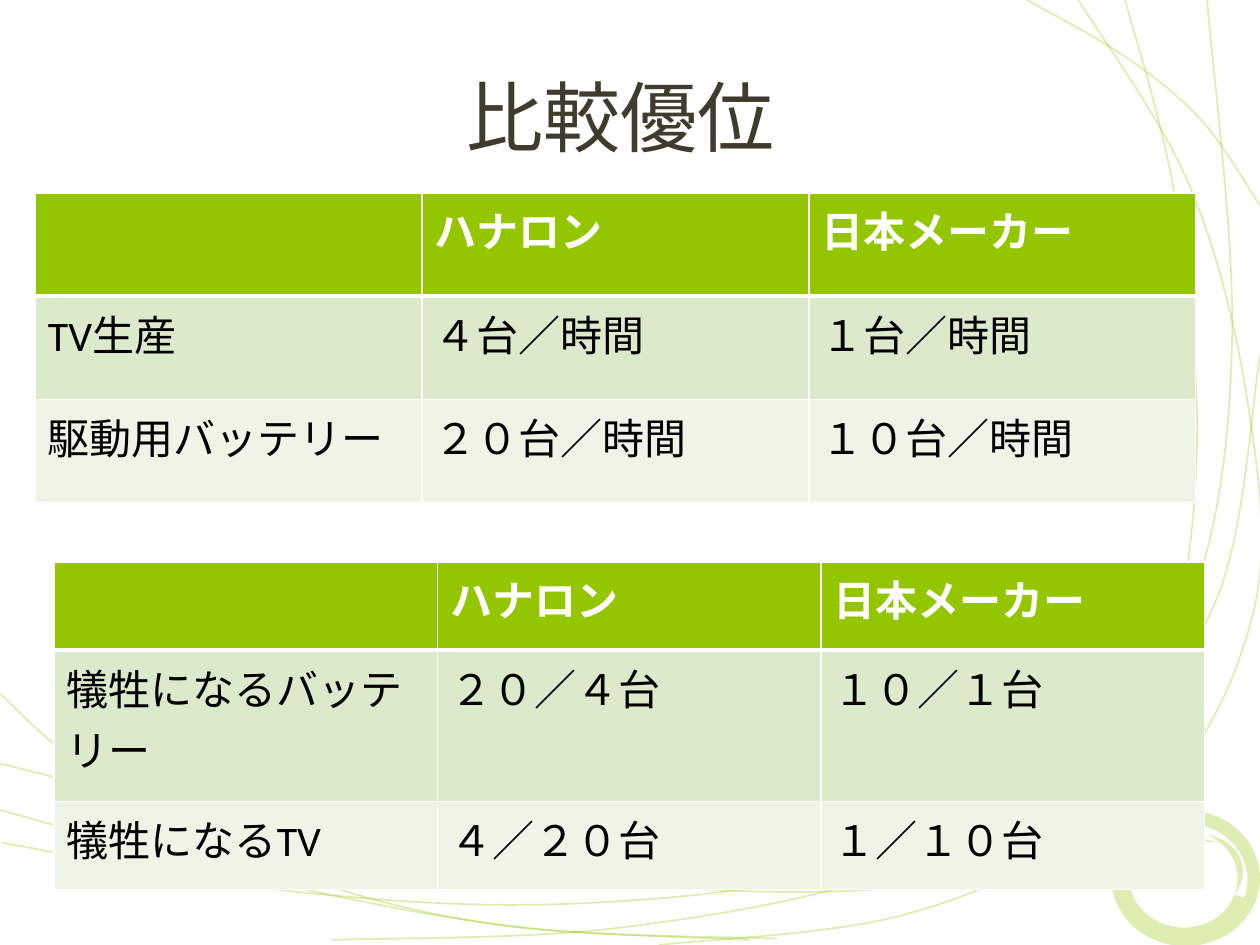
from dataclasses import dataclass
from math import cos, pi, radians, sin

from lxml import etree
from pptx import Presentation
from pptx import util as u
from pptx.dml.color import RGBColor
from pptx.enum import lang, text
from pptx.oxml.ns import qn


@dataclass(frozen=True)
class Theme:
    font: str = "Calibri"
    green: str = "94C600"
    band: str = "DCEACC"
    pale: str = "EEF5E7"
    white: str = "FFFFFF"
    black: str = "000000"
    dark: str = "3E3D2D"
    title: int = 44
    body: int = 24
    clear: int = 30  # opacity of the background art, in percent


THEME = Theme()

# Each background curve is a smooth line through a few knots, in inches
CURVES = {
    "left edge": [(-0.03, 5.48), (0.8, 6.18), (2.31, 6.93), (4.02, 7.35),
                  (6.17, 7.45)],
    "inner loop": [(5.23, 7.5), (7.14, 7.27), (8.44, 6.63), (9.24, 5.27),
                   (9.5, 3.52), (9.32, 1.54), (8.93, 0)],
    "outer loop": [(0, 6.06), (2.48, 6.65), (5.14, 7.03), (7.42, 7),
                   (9.13, 6.34), (9.95, 4.85), (9.9, 3.18), (9.44, 1.47),
                   (8.56, 0)],
    "low bowl": [(0.02, 6.69), (2.37, 7.08), (4.6, 7.17), (6.82, 6.87),
                 (8.61, 6.02), (9.65, 4.77), (10, 2.82)],
    "right bowl": [(2.63, 7.46), (4.86, 7.37), (7.02, 6.94), (8.63, 6.1),
                   (9.5, 4.64), (9.78, 2.63), (9.58, 0)],
    "top corner": [(8.15, 0), (8.93, 0.45), (9.54, 0.96), (10, 1.63)],
    "bottom corner": [(0, 6.43), (2.11, 6.99), (4.05, 7.35), (5.95, 7.46)],
}

# The brushed ring is an ellipse; its edges are shares of these radii
RING_X, RING_Y = 9.41, 6.97
RING_WIDE, RING_HIGH = 0.59, 0.54
HOLE = 0.7    # inner edge where the brush is widest
TAIL = 0.84   # inner edge where the brush runs out
SEAM = 20     # angle where the brush starts, in degrees

# Fine hairs of the brush: start and end
HAIRS = [((9.22, 6.61), (9.69, 6.69)), ((9.3, 6.76), (9.55, 6.84))]


def smooth(knots, steps=12):
    """Return points of a Catmull-Rom curve through the knots."""
    ends = [knots[0], *knots, knots[-1]]
    points = [knots[0]]
    for four in zip(ends, ends[1:], ends[2:], ends[3:]):
        for step in range(1, steps + 1):
            t = step / steps
            points.append(tuple(
                (2 * b + (c - a) * t + (2 * a - 5 * b + 4 * c - d) * t**2
                 + (3 * b - a - 3 * c + d) * t**3) / 2
                for a, b, c, d in zip(*four)))
    return points


def sweep(first, last, outer, inner, steps=60):
    """Outline a ring part; outer and inner give its edges for t in 0..1."""
    def edge(rule):
        for step in range(steps + 1):
            t = step / steps
            turn = radians(first + (last - first) * t)
            yield (RING_X + RING_WIDE * rule(t) * cos(turn),
                   RING_Y + RING_HIGH * rule(t) * sin(turn))
    return [*edge(outer), *reversed(list(edge(inner)))]


def hair(start, end, width=0.03):
    """Outline a thin diamond from start to end."""
    x, y = ((a + b) / 2 for a, b in zip(start, end))
    return [start, (x, y - width / 2), end, (x, y + width / 2)]


def paint(fill, code):
    fill.solid()
    fill.fore_color.rgb = RGBColor.from_string(code)


def draw(slide, points, close):
    """Draw a closed shape with a fill, or an open curve with a line."""
    spots = [(u.Inches(x), u.Inches(y)) for x, y in points]
    path = slide.shapes.build_freeform(*spots[0])
    path.add_line_segments(spots[1:], close=close)
    shape = path.convert_to_shape()
    shape.shadow.inherit = False
    shape.line.width = u.Pt(1)
    inks = [shape.line.fill, shape.fill]
    paint(inks[close], THEME.green)
    inks[not close].background()
    for color in shape.element.spPr.iter(qn("a:srgbClr")):
        etree.SubElement(color, qn("a:alpha"), val=str(THEME.clear * 1000))


def art(slide):
    """Draw the curves, then the ring and its hairs."""
    for knots in CURVES.values():
        draw(slide, smooth(knots), close=False)
    ring = sweep(SEAM, SEAM + 360, lambda t: 1,
                 lambda t: HOLE + (TAIL - HOLE) * t)
    lip = sweep(SEAM - 85, SEAM, lambda t: HOLE + 0.09 * sin(pi * t),
                lambda t: HOLE)
    for points in [ring, lip, *(hair(*ends) for ends in HAIRS)]:
        draw(slide, points, close=True)


def write(frame, words, size=THEME.body, color=THEME.black, bold=False,
          align=text.PP_ALIGN.LEFT):
    para = frame.paragraphs[0]
    para.alignment = align
    run = para.add_run()
    run.text = words
    font = run.font
    font.name, font.size, font.bold = THEME.font, u.Pt(size), bold
    font.language_id = lang.MSO_LANGUAGE_ID.JAPANESE
    paint(font.fill, color)


def title(slide, words):
    box = slide.shapes.add_textbox(
        u.Inches(0.43), u.Inches(0.29), u.Inches(9), u.Inches(1.25))
    frame = box.text_frame
    frame.word_wrap = True
    frame.vertical_anchor = text.MSO_ANCHOR.MIDDLE
    write(frame, words, size=THEME.title, color=THEME.dark,
          align=text.PP_ALIGN.CENTER)


def border(cell, base):
    """Add white cell edges; base is the width of the bottom one."""
    props = cell._tc.get_or_add_tcPr()
    widths = {"L": 1, "R": 1, "T": 1, "B": base}
    for spot, (side, width) in enumerate(widths.items()):
        line = etree.Element(qn("a:ln" + side), w=str(u.Pt(width)))
        fill = etree.SubElement(line, qn("a:solidFill"))
        etree.SubElement(fill, qn("a:srgbClr"), val=THEME.white)
        props.insert(spot, line)


def grid(slide, left, top, width, heights, rows):
    """Add a table with a green head row and two tinted rows."""
    table = slide.shapes.add_table(
        len(rows), len(rows[0]), u.Inches(left), u.Inches(top),
        u.Inches(width), u.Inches(sum(heights))).table
    table.horz_banding = False
    tints = [THEME.green, THEME.band, THEME.pale]
    for line, height, tint, row in zip(table.rows, heights, tints, rows):
        line.height = u.Inches(height)
        head = row is rows[0]
        for cell, words in zip(line.cells, row):
            paint(cell.fill, tint)
            border(cell, 3 if head else 1)
            if words:
                write(cell.text_frame, words, bold=head,
                      color=THEME.white if head else THEME.black)


def main():
    deck = Presentation()
    deck.slide_width, deck.slide_height = u.Inches(10), u.Inches(7.5)
    slide = deck.slides.add_slide(deck.slide_layouts[6])

    art(slide)
    title(slide, "比較優位")

    # Output per hour
    head = ["", "ハナロン", "日本メーカー"]
    grid(slide, 0.28, 1.53, 9.21, [0.82] * 3, [
        head,
        ["TV生産", "４台／時間", "１台／時間"],
        ["駆動用バッテリー", "２０台／時間", "１０台／時間"]])

    # What one unit costs in the other good
    grid(slide, 0.43, 4.46, 9.13, [0.7, 1.2, 0.7], [
        head,
        ["犠牲になるバッテリー", "２０／４台", "１０／１台"],
        ["犠牲になるTV", "４／２０台", "１／１０台"]])

    deck.save("out.pptx")


if __name__ == "__main__":
    main()
